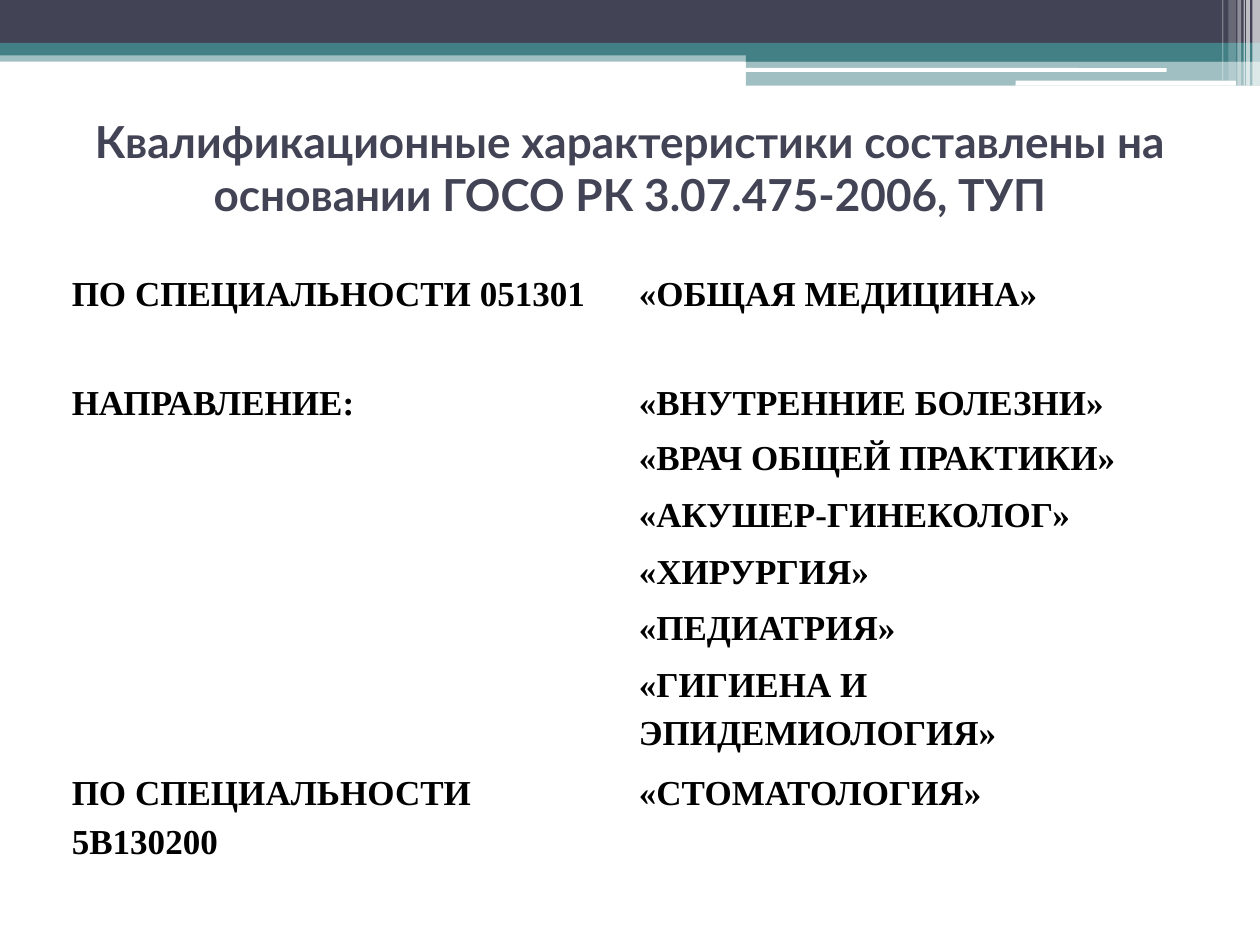
from lxml import etree
from pptx import Presentation, util as u
from pptx.dml.color import RGBColor
from pptx.enum import shapes, text
from pptx.oxml import ns

WIDTH, HEIGHT = u.Inches(10), u.Inches(7.5)
WHITE = RGBColor(0xFF, 0xFF, 0xFF)
BLACK = RGBColor(0, 0, 0)
SLATE = RGBColor(0x42, 0x44, 0x56)
TEAL = RGBColor(0x43, 0x80, 0x86)
RECT = shapes.MSO_SHAPE.RECTANGLE
ROUND = shapes.MSO_SHAPE.ROUNDED_RECTANGLE

BANDS = [
    (RECT, (0, 5.33, 100, 1.2), TEAL, 50),
    (RECT, (0, 0, 100, 4.53), SLATE, 100),
    (RECT, (0, 4.53, 100, 1.33), TEAL, 100),
    (RECT, (59.2, 5.2, 40.8, 1.33), TEAL, 100),
    (RECT, (59.2, 6.4, 40.8, 2.67), TEAL, 50),
    (ROUND, (59.1, 7.2, 33.5, 0.4), WHITE, 100),
    (ROUND, (80.6, 8.53, 17.5, 0.53), WHITE, 100),
]
STRIPES = [
    (99.4, 0.6, 9.07, 65),
    (98.9, 0.3, 9.07, 65),
    (98.7, 0.1, 9.07, 60),
    (98.2, 0.3, 9.07, 40),
    (97.5, 0.6, 8.53, 20),
    (97, 0.1, 8.53, 30),
]
TITLE = "Квалификационные характеристики составлены на основании ГОСО РК 3.07.475-2006, ТУП"
SPECIALTIES = [
    ("ПО СПЕЦИАЛЬНОСТИ 051301", "«ОБЩАЯ МЕДИЦИНА»", 11.47),
    ("НАПРАВЛЕНИЕ:", "«ВНУТРЕННИЕ БОЛЕЗНИ»", 5.87),
    ("", "«ВРАЧ ОБЩЕЙ ПРАКТИКИ»", 6),
    ("", "«АКУШЕР-ГИНЕКОЛОГ»", 6),
    ("", "«ХИРУРГИЯ»", 6),
    ("", "«ПЕДИАТРИЯ»", 6),
    ("", "«ГИГИЕНА И ЭПИДЕМИОЛОГИЯ»", 11.47),
    ("ПО СПЕЦИАЛЬНОСТИ 5В130200", "«СТОМАТОЛОГИЯ»", 11.47),
]
TITLE_FONT = {"name": "Lato", "size": u.Pt(25.2), "bold": True}
CELL_FONT = {"name": "Times New Roman", "size": u.Pt(20), "bold": True}
CELL_MARGINS = {"margin_left": u.Inches(0.07), "margin_right": u.Inches(0.07),
                "margin_top": 0, "margin_bottom": 0}


def across(percent):
    return round(WIDTH * percent / 100)


def down(percent):
    return round(HEIGHT * percent / 100)


def place(left, top, width, height):
    return across(left), down(top), across(width), down(height)


def apply(target, values):
    for key, value in values.items():
        setattr(target, key, value)


def style_font(font, values, color):
    apply(font, values)
    font.color.rgb = color


def add_band(slide, kind, box, color, opacity):
    band = slide.shapes.add_shape(kind, *place(*box))
    band.shadow.inherit = False
    band.line.fill.background()
    band.fill.solid()
    band.fill.fore_color.rgb = color
    if opacity < 100:
        tint = band.fill._xPr.find(".//" + ns.qn("a:srgbClr"))
        etree.SubElement(tint, ns.qn("a:alpha"), val=str(opacity * 1000))


def fill_title(slide):
    title = slide.shapes.title
    box = place(5, 9.33, 90, 16.67)
    apply(title, dict(zip(("left", "top", "width", "height"), box)))
    frame = title.text_frame
    apply(frame, {"text": TITLE, "word_wrap": True,
                  "auto_size": text.MSO_AUTO_SIZE.NONE,
                  "vertical_anchor": text.MSO_ANCHOR.MIDDLE})
    heading = frame.paragraphs[0]
    heading.alignment = text.PP_ALIGN.CENTER
    style_font(heading.runs[0].font, TITLE_FONT, SLATE)


def add_borders(cell, bottom_width):
    properties = cell._tc.get_or_add_tcPr()
    widths = {"lnL": 1, "lnR": 1, "lnT": 1, "lnB": bottom_width}
    for position, (side, width) in enumerate(widths.items()):
        border = etree.Element(ns.qn("a:" + side), w=str(u.Pt(width)))
        fill = etree.SubElement(border, ns.qn("a:solidFill"))
        etree.SubElement(fill, ns.qn("a:srgbClr"), val=str(WHITE))
        properties.insert(position, border)


def fill_cell(cell, wording, bottom_width):
    apply(cell, CELL_MARGINS)
    cell.fill.solid()
    cell.fill.fore_color.rgb = WHITE
    add_borders(cell, bottom_width)
    if wording:
        cell.text = wording
        line = cell.text_frame.paragraphs[0]
        line.line_spacing = 1.25
        style_font(line.runs[0].font, CELL_FONT, BLACK)


def add_specialties(slide):
    total = sum(share for _, _, share in SPECIALTIES)
    table = slide.shapes.add_table(len(SPECIALTIES), 2, *place(5, 28.13, 90, total)).table
    apply(table, {"first_row": False, "horz_banding": False})
    for index, (label, specialty, share) in enumerate(SPECIALTIES):
        table.rows[index].height = down(share)
        for column, wording in enumerate((label, specialty)):
            fill_cell(table.cell(index, column), wording, 1 if index else 3)
    last_line = table.cell(len(SPECIALTIES) - 1, 1).text_frame.paragraphs[0]
    last_line.alignment = text.PP_ALIGN.JUSTIFY


def main():
    deck = Presentation()
    apply(deck, {"slide_width": WIDTH, "slide_height": HEIGHT})
    slide = deck.slides.add_slide(deck.slide_layouts[5])
    for band in BANDS:
        add_band(slide, *band)
    for left, width, height, opacity in STRIPES:
        add_band(slide, RECT, (left, 0, width, height), WHITE, opacity)
    fill_title(slide)
    add_specialties(slide)
    deck.save("out.pptx")


if __name__ == "__main__":
    main()
